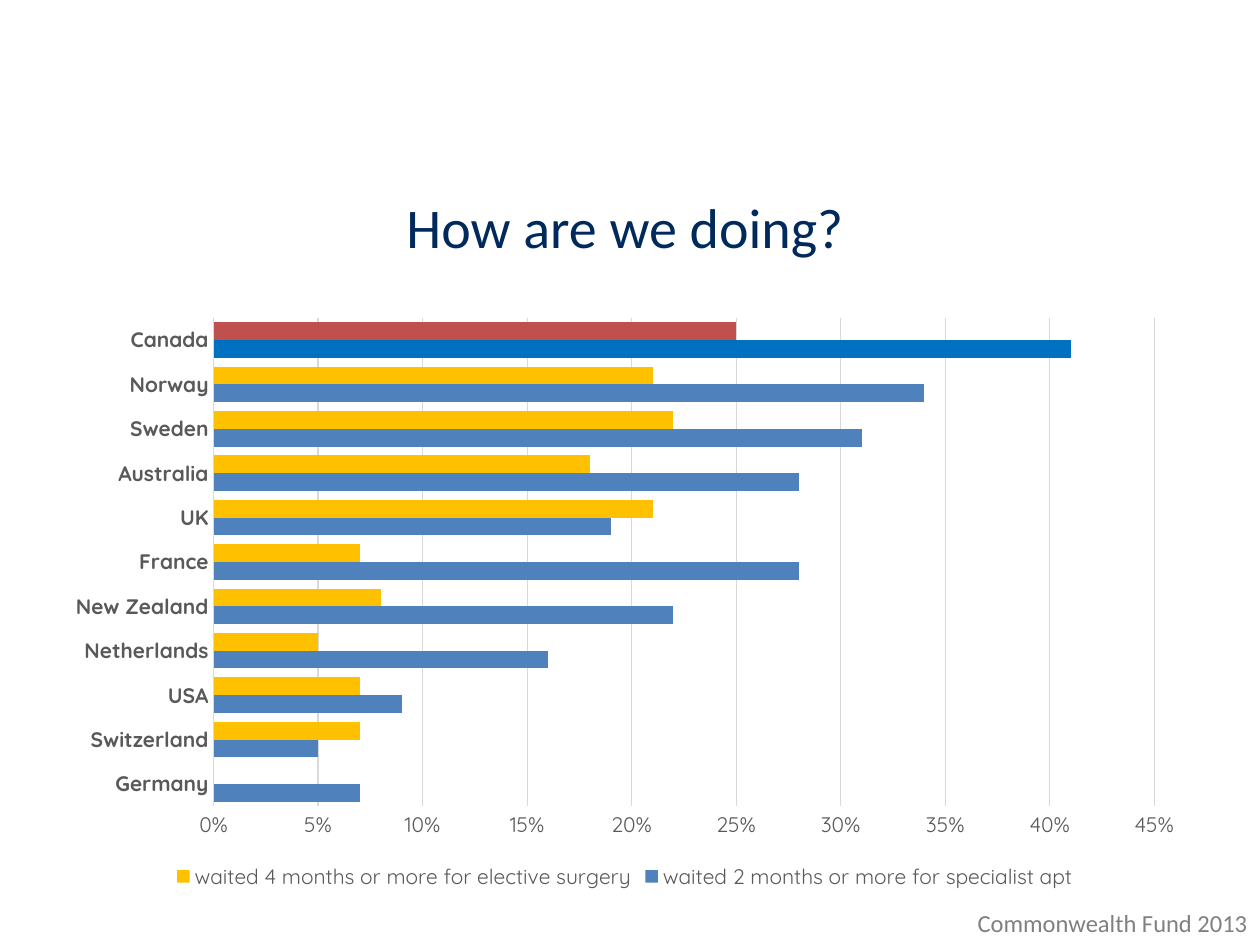
from typing import NamedTuple

from pptx import Presentation
from pptx.chart.data import CategoryChartData
from pptx.dml.color import RGBColor
from pptx.enum.chart import XL_CHART_TYPE, XL_LEGEND_POSITION, XL_TICK_MARK
from pptx.enum.text import MSO_ANCHOR, PP_ALIGN
from pptx.util import Inches, Pt

NAVY = RGBColor(0x00, 0x2A, 0x5C)
GRAY = RGBColor(0x80, 0x80, 0x80)
DARK = RGBColor(0x59, 0x59, 0x59)
PALE = RGBColor(0xD9, 0xD9, 0xD9)
BLUE = RGBColor(0x4F, 0x81, 0xBD)
DEEP = RGBColor(0x00, 0x70, 0xC0)
GOLD = RGBColor(0xFF, 0xC0, 0x00)
RED = RGBColor(0xC0, 0x50, 0x4D)

WIDTH, HEIGHT = Inches(10), Inches(7.5)


class Box(NamedTuple):
    """Place and size in percent of the slide."""
    left: float
    top: float
    width: float
    height: float

    def frame(self) -> tuple[int, int, int, int]:
        return (int(WIDTH * self.left / 100), int(HEIGHT * self.top / 100),
                int(WIDTH * self.width / 100), int(HEIGHT * self.height / 100))


class Label(NamedTuple):
    text: str
    box: Box
    size: int
    color: RGBColor
    align: PP_ALIGN
    anchor: MSO_ANCHOR


class Wait(NamedTuple):
    """One series of waits; accent marks the bar of Canada."""
    name: str
    shares: list[float]
    color: RGBColor
    accent: RGBColor


LABELS = [
    Label("How are we doing?", Box(4.2, 18.93, 90.8, 10), 32, NAVY,
          PP_ALIGN.CENTER, MSO_ANCHOR.MIDDLE),
    Label("Commonwealth Fund 2013", Box(70, 95.47, 30, 4.53), 14, GRAY,
          PP_ALIGN.RIGHT, MSO_ANCHOR.TOP),
]
PLOT = Box(4.2, 32.4, 90.8, 62.27)
LANDS = ["Germany", "Switzerland", "USA", "Netherlands", "New Zealand",
         "France", "UK", "Australia", "Sweden", "Norway", "Canada"]
WAITS = [
    Wait("waited 2 months or more for specialist apt",
         [0.07, 0.05, 0.09, 0.16, 0.22, 0.28, 0.19, 0.28, 0.31, 0.34, 0.41],
         BLUE, DEEP),
    Wait("waited 4 months or more for elective surgery",
         [0, 0.07, 0.07, 0.05, 0.08, 0.07, 0.21, 0.18, 0.22, 0.21, 0.25],
         GOLD, RED),
]


def set_font(font, name: str, size: int, color: RGBColor, bold: bool = False) -> None:
    font.name = name
    font.size = Pt(size)
    font.bold = bold
    font.color.rgb = color


def paint(part, color: RGBColor) -> None:
    part.format.fill.solid()
    part.format.fill.fore_color.rgb = color


def rule(line) -> None:
    line.color.rgb = PALE
    line.width = Pt(0.75)


def add_label(slide, label: Label) -> None:
    frame = slide.shapes.add_textbox(*label.box.frame()).text_frame
    frame.word_wrap = True
    frame.vertical_anchor = label.anchor
    frame.text = label.text
    para = frame.paragraphs[0]
    para.alignment = label.align
    set_font(para.runs[0].font, "Calibri", label.size, label.color)


def add_bars(slide) -> None:
    data = CategoryChartData(number_format="0%")
    data.categories = LANDS
    for wait in WAITS:
        data.add_series(wait.name, wait.shares)
    chart = slide.shapes.add_chart(
        XL_CHART_TYPE.BAR_CLUSTERED, *PLOT.frame(), data).chart
    chart.has_title = False
    set_font(chart.font, "Quicksand", 12, DARK)

    plot = chart.plots[0]
    plot.gap_width = 50
    plot.overlap = 0
    plot.vary_by_categories = False
    for series, wait in zip(plot.series, WAITS):
        series.invert_if_negative = False
        paint(series, wait.color)
        paint(series.points[LANDS.index("Canada")], wait.accent)

    lands, scale = chart.category_axis, chart.value_axis
    for axis in (lands, scale):
        axis.major_tick_mark = axis.minor_tick_mark = XL_TICK_MARK.NONE
        set_font(axis.tick_labels.font, "Quicksand", 12, DARK, axis is lands)
    lands.has_major_gridlines = False
    rule(lands.format.line)
    scale.minimum_scale, scale.maximum_scale, scale.major_unit = 0, 0.45, 0.05
    scale.tick_labels.number_format = "0%"
    scale.tick_labels.number_format_is_linked = False
    scale.format.line.fill.background()
    scale.has_major_gridlines = True
    rule(scale.major_gridlines.format.line)

    chart.has_legend = True
    chart.legend.position = XL_LEGEND_POSITION.BOTTOM
    chart.legend.include_in_layout = False
    set_font(chart.legend.font, "Quicksand", 12, DARK)


def main() -> None:
    deck = Presentation()
    deck.slide_width, deck.slide_height = WIDTH, HEIGHT
    slide = deck.slides.add_slide(deck.slide_layouts[6])
    for label in LABELS:
        add_label(slide, label)
    add_bars(slide)
    deck.save("out.pptx")


if __name__ == "__main__":
    main()
